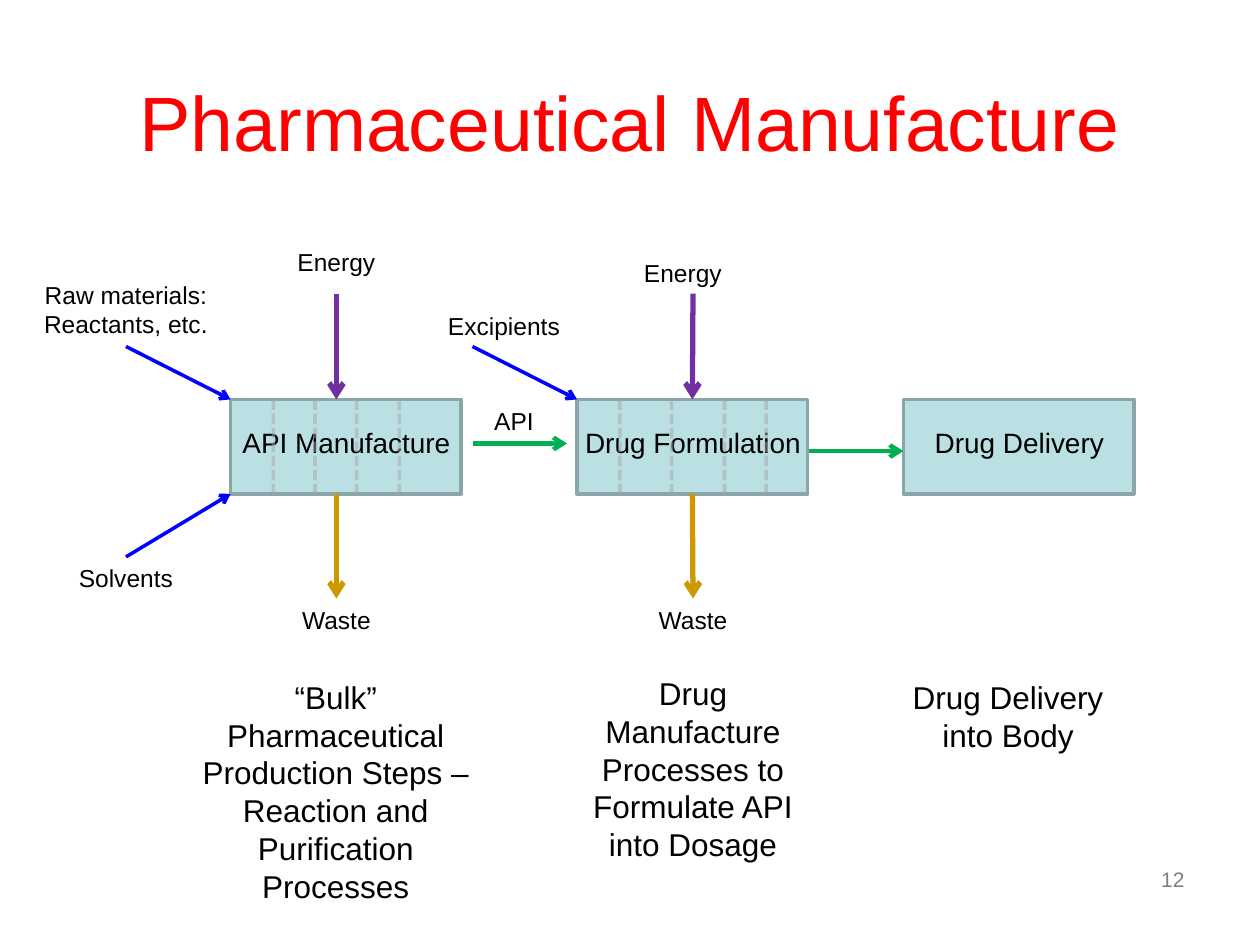
from lxml import etree
from pptx import Presentation
from pptx.dml.color import RGBColor
from pptx.enum.dml import MSO_LINE
from pptx.enum.shapes import MSO_CONNECTOR, MSO_SHAPE
from pptx.enum.text import MSO_ANCHOR, MSO_AUTO_SIZE, PP_ALIGN
from pptx.oxml import parse_xml
from pptx.oxml.ns import nsdecls, qn
from pptx.util import Inches, Pt

STRAIGHT, RECT = MSO_CONNECTOR.STRAIGHT, MSO_SHAPE.RECTANGLE
DASH = MSO_LINE.SQUARE_DOT
CENTER, RIGHT, MIDDLE = PP_ALIGN.CENTER, PP_ALIGN.RIGHT, MSO_ANCHOR.MIDDLE
GROW, FIXED = MSO_AUTO_SIZE.SHAPE_TO_FIT_TEXT, MSO_AUTO_SIZE.NONE
rgb = RGBColor.from_string
BLUE, PURPLE, OCHRE, GREEN = "0000FF", "7030A0", "CC9900", "00B050"


def add_text(x, y, w, h, lines, size, align=CENTER):
    sp = s.shapes.add_textbox(Inches(x), Inches(y), Inches(w), Inches(h))
    tf = sp.text_frame
    tf.word_wrap = True
    tf.auto_size = GROW
    tf.text = lines
    for p in tf.paragraphs:
        p.alignment = align
        for r in p.runs:
            for name, value in {"name": "Arial", "size": Pt(size)}.items():
                setattr(r.font, name, value)
            r.font.color.rgb = rgb("000000")
    return sp


def add_line(x1, y1, x2, y2, color, width, arrow=True):
    line = s.shapes.add_connector(STRAIGHT, Inches(x1), Inches(y1), Inches(x2), Inches(y2))
    line.line.color.rgb = rgb(color)
    line.line.width = Pt(width)
    if arrow:
        ln = line._element.spPr.find(qn("a:ln"))
        etree.SubElement(ln, qn("a:tailEnd"), type="arrow")
    etree.SubElement(line._element.spPr, qn("a:effectLst"))
    return line


prs = Presentation()
prs.slide_width, prs.slide_height = Inches(10), Inches(7.5)
prs.element.set("firstSlideNum", "12")
s = prs.slides.add_slide(prs.slide_layouts[5])

title = s.shapes.title
for name, value in {"left": 0.5, "top": 0.33, "width": 9, "height": 1.25}.items():
    setattr(title, name, Inches(value))
tf = title.text_frame
tf.text = "Pharmaceutical Manufacture"
tf.vertical_anchor = MIDDLE
p = tf.paragraphs[0]
p.alignment = CENTER
r = p.runs[0]
for name, value in {"name": "Arial", "size": Pt(44)}.items():
    setattr(r.font, name, value)
r.font.color.rgb = rgb("FF0000")

# Process stages
TOP, HEIGHT = 3.17, 0.75
BOTTOM = TOP + HEIGHT
stages = {}
for x, name in [(1.83, "API Manufacture"), (4.58, "Drug Formulation"), (7.17, "Drug Delivery")]:
    sp = s.shapes.add_shape(RECT, Inches(x), Inches(TOP), Inches(1.83), Inches(HEIGHT))
    sp.shadow.inherit = False
    sp.fill.solid()
    sp.fill.fore_color.rgb = rgb("BBE0E3")
    sp.line.color.rgb = rgb("8AA6A8")
    sp.line.width = Pt(2)
    add_text(x - 0.08, 3.33, 2, 0.37, name, 16)
    stages[name] = sp

# Flows of material and energy
add_line(1, 2.75, 1.83, TOP, BLUE, 2)
add_line(1, 4.42, 1.83, BOTTOM, BLUE, 2)
add_line(3.75, 2.75, 4.58, TOP, BLUE, 2)
add_line(3.75, 3.52, 4.5, 3.52, GREEN, 2.5)
add_line(6.42, 3.58, 7.17, 3.58, GREEN, 2.5)
add_line(2.67, 2.33, 2.67, TOP, PURPLE, 3)
add_line(2.67, BOTTOM, 2.67, 4.75, OCHRE, 3)
formulation = stages["Drug Formulation"]
add_line(5.5, 2.33, 5.5, TOP, PURPLE, 3).end_connect(formulation, 0)
add_line(5.5, BOTTOM, 5.5, 4.75, OCHRE, 3).begin_connect(formulation, 2)

for x, y, h, label in [
    (0, 2.17, 0.57, "Raw materials: Reactants, etc."),
    (0, 4.42, 0.34, "Solvents"),
    (1.67, 1.91, 0.34, "Energy"),
    (1.67, 4.75, 0.34, "Waste"),
    (3, 2.42, 0.34, "Excipients"),
    (3.08, 3.17, 0.34, "API"),
    (4.42, 2, 0.34, "Energy"),
    (4.5, 4.75, 0.34, "Waste"),
]:
    add_text(x, y, 2, h, label, 14)

# Dashed divisions into unit steps
for x in (2.17, 2.5, 2.83, 3.17, 4.92, 5.33, 5.75, 6.08):
    line = add_line(x, TOP, x, BOTTOM, "A6A6A6", 2, arrow=False)
    line.line.dash_style = DASH
    color = line._element.spPr.find(".//" + qn("a:srgbClr"))
    etree.SubElement(color, qn("a:alpha"), val="50000")

# Descriptions under the stages
for x, y, w, h, text in [
    (1.5, 5.33, 2.33, 1.92,
     "“Bulk” Pharmaceutical Production Steps –\nReaction and Purification Processes"),
    (4.5, 5.3, 2, 1.62, "Drug Manufacture Processes to Formulate API into Dosage"),
    (7, 5.33, 2, 0.71, "Drug Delivery into Body"),
]:
    add_text(x, y, w, h, text, 18)

# Slide number as a live field
sp = add_text(7.17, 6.83, 2.33, 0.52, "", 12, RIGHT)
sp.text_frame.auto_size = FIXED
sp.text_frame.paragraphs[0]._p.append(parse_xml(
    f'<a:fld {nsdecls("a")} id="{{B6F15528-21DE-4FAA-801E-634DDDAF4B2B}}" type="slidenum">'
    '<a:rPr lang="en-US" sz="1200"><a:solidFill><a:srgbClr val="808080"/></a:solidFill>'
    '<a:latin typeface="Arial"/></a:rPr><a:t>12</a:t></a:fld>'))

prs.save("out.pptx")
